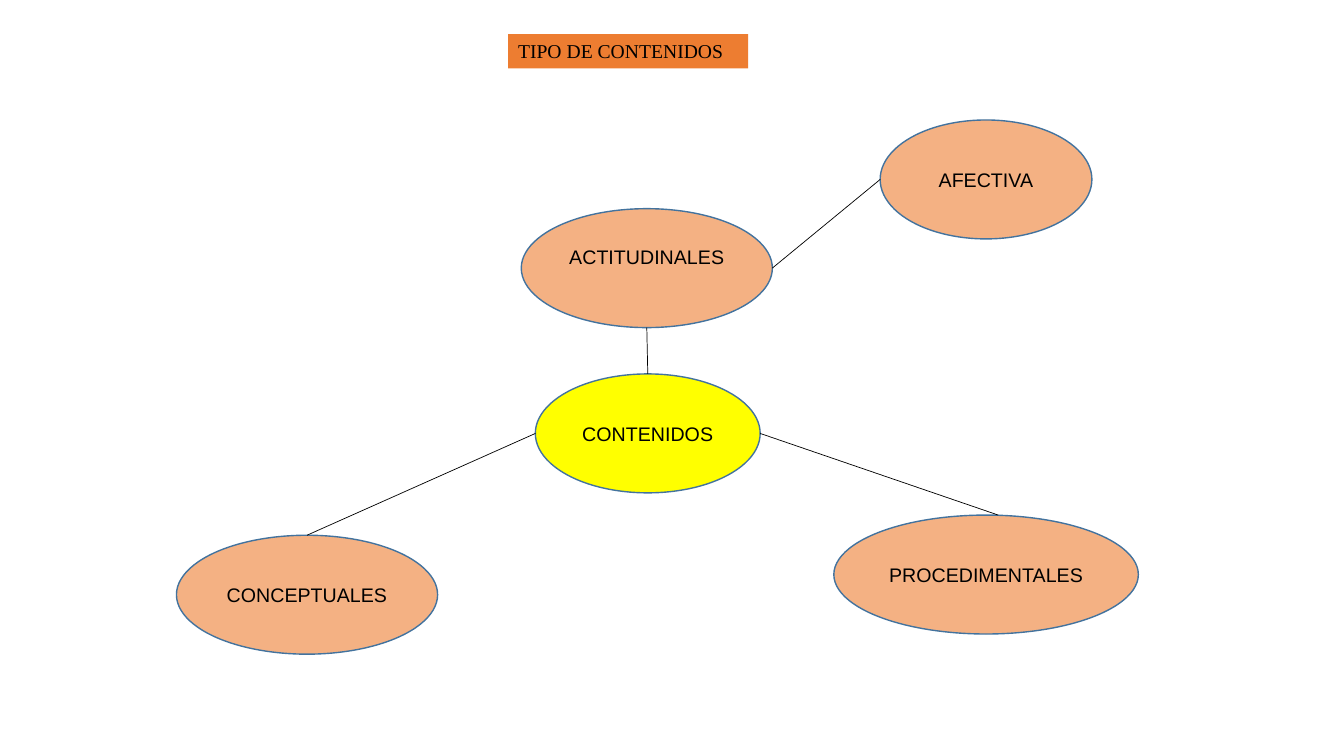
from lxml import etree
from pptx import Presentation
from pptx.dml.color import RGBColor
from pptx.enum.shapes import MSO_CONNECTOR, MSO_SHAPE
from pptx.enum.text import MSO_ANCHOR, PP_ALIGN
from pptx.oxml.ns import qn
from pptx.util import Inches, Pt

RECTANGLE, ELLIPSE = MSO_SHAPE.RECTANGLE, MSO_SHAPE.OVAL
STRAIGHT = MSO_CONNECTOR.STRAIGHT
TOP, MIDDLE = MSO_ANCHOR.TOP, MSO_ANCHOR.MIDDLE
LEFT, CENTER = PP_ALIGN.LEFT, PP_ALIGN.CENTER

ORANGE = RGBColor(0xED, 0x7D, 0x31)
PEACH = RGBColor(0xF4, 0xB1, 0x83)
YELLOW = RGBColor(0xFF, 0xFF, 0x00)
BLUE = RGBColor(0x43, 0x73, 0x9E)
BLACK = RGBColor(0x00, 0x00, 0x00)

TITLE = "TIPO DE CONTENIDOS"
TITLE_AREA = (5.04, 0.34, 2.38, 0.34)
OVAL_HEIGHT = 1.18
OVALS = {
    "AFECTIVA": (8.73, 1.19, 2.1, PEACH, 0.05),
    "ACTITUDINALES": (5.17, 2.07, 2.49, PEACH, 0.27),
    "CONCEPTUALES": (1.75, 5.31, 2.59, PEACH, 0.05),
    "CONTENIDOS": (5.31, 3.71, 2.23, YELLOW, 0.05),
    "PROCEDIMENTALES": (8.27, 5.11, 3.02, PEACH, 0.05),
}
TOP_SIDE, BOTTOM_SIDE = (0.5, 0), (0.5, 1)
LEFT_SIDE, RIGHT_SIDE = (0, 0.5), (1, 0.5)
LINKS = [
    ("ACTITUDINALES", BOTTOM_SIDE, "CONTENIDOS", TOP_SIDE),
    ("CONTENIDOS", LEFT_SIDE, "CONCEPTUALES", TOP_SIDE),
    ("CONTENIDOS", RIGHT_SIDE, "PROCEDIMENTALES", (0.54, 0)),
    ("ACTITUDINALES", RIGHT_SIDE, "AFECTIVA", LEFT_SIDE),
]


def add_label(page, text, *, kind, area, fill, outline=None, font="Arial",
              align=CENTER, anchor=MIDDLE, side_inset=0, bottom_inset=0.05):
    box = page.shapes.add_shape(kind, *map(Inches, area))
    box.shadow.inherit = False
    box.fill.solid()
    box.fill.fore_color.rgb = fill
    if outline is None:
        box.line.fill.background()
    else:
        box.line.color.rgb = outline
        box.line.width = Pt(1)
    frame = box.text_frame
    frame.word_wrap = True
    frame.vertical_anchor = anchor
    frame.margin_left = frame.margin_right = Inches(side_inset)
    frame.margin_bottom = Inches(bottom_inset)
    para = frame.paragraphs[0]
    para.alignment = align
    span = para.add_run()
    span.text = text
    span.font.name = font
    span.font.size = Pt(14)
    span.font.color.rgb = BLACK


def side_point(name, side):
    left, top, width = OVALS[name][:3]
    return Inches(left + width * side[0]), Inches(top + OVAL_HEIGHT * side[1])


def add_link(page, start, end):
    link = page.shapes.add_connector(STRAIGHT, *start, *end)
    link.line.color.rgb = BLACK
    link.line.width = Pt(0.5)
    etree.SubElement(link._element.spPr, qn("a:effectLst"))


def main():
    deck = Presentation()
    deck.slide_width, deck.slide_height = Inches(13.33), Inches(7.5)
    page = deck.slides.add_slide(deck.slide_layouts[6])
    add_label(page, TITLE, kind=RECTANGLE, area=TITLE_AREA, fill=ORANGE,
              font="Times New Roman", align=LEFT, anchor=TOP, side_inset=0.1)
    for name, (left, top, width, fill, bottom_inset) in OVALS.items():
        add_label(page, name, kind=ELLIPSE, area=(left, top, width, OVAL_HEIGHT),
                  fill=fill, outline=BLUE, bottom_inset=bottom_inset)
    for first, first_side, second, second_side in LINKS:
        add_link(page, side_point(first, first_side), side_point(second, second_side))
    deck.save("out.pptx")


if __name__ == "__main__":
    main()
